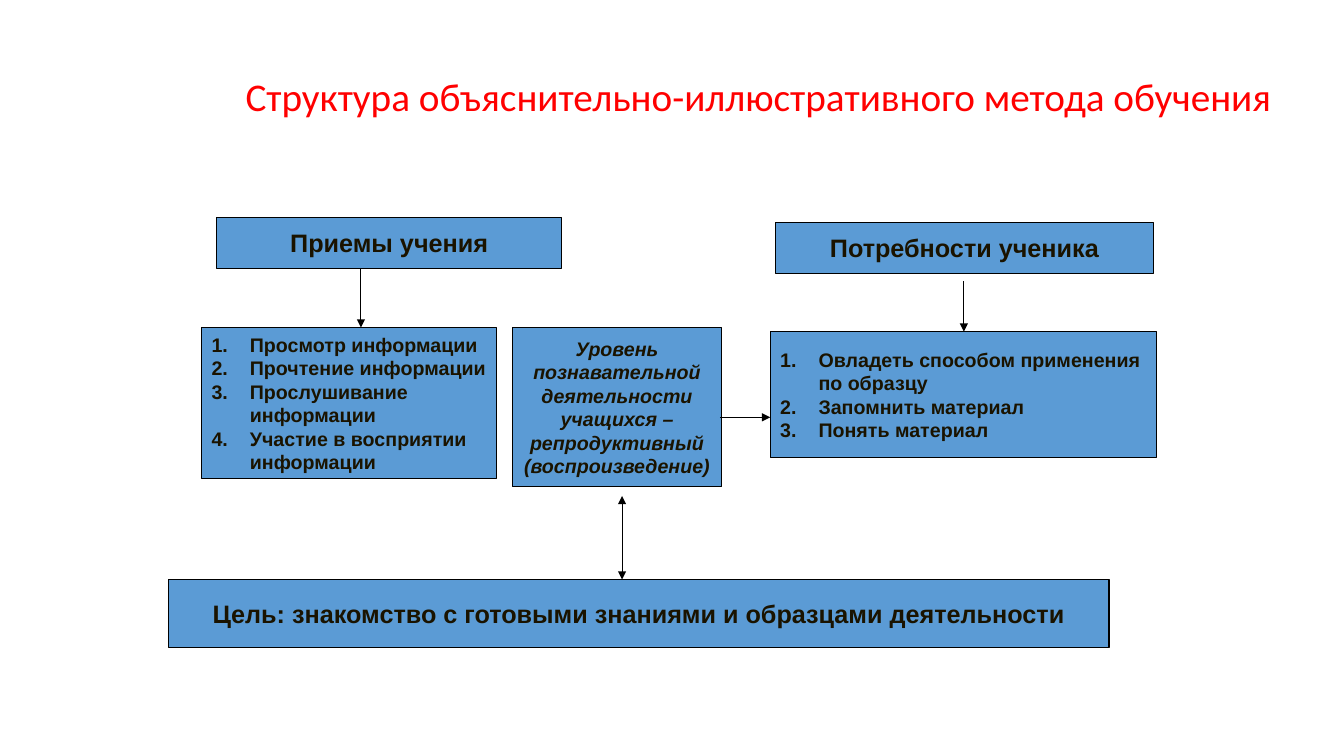
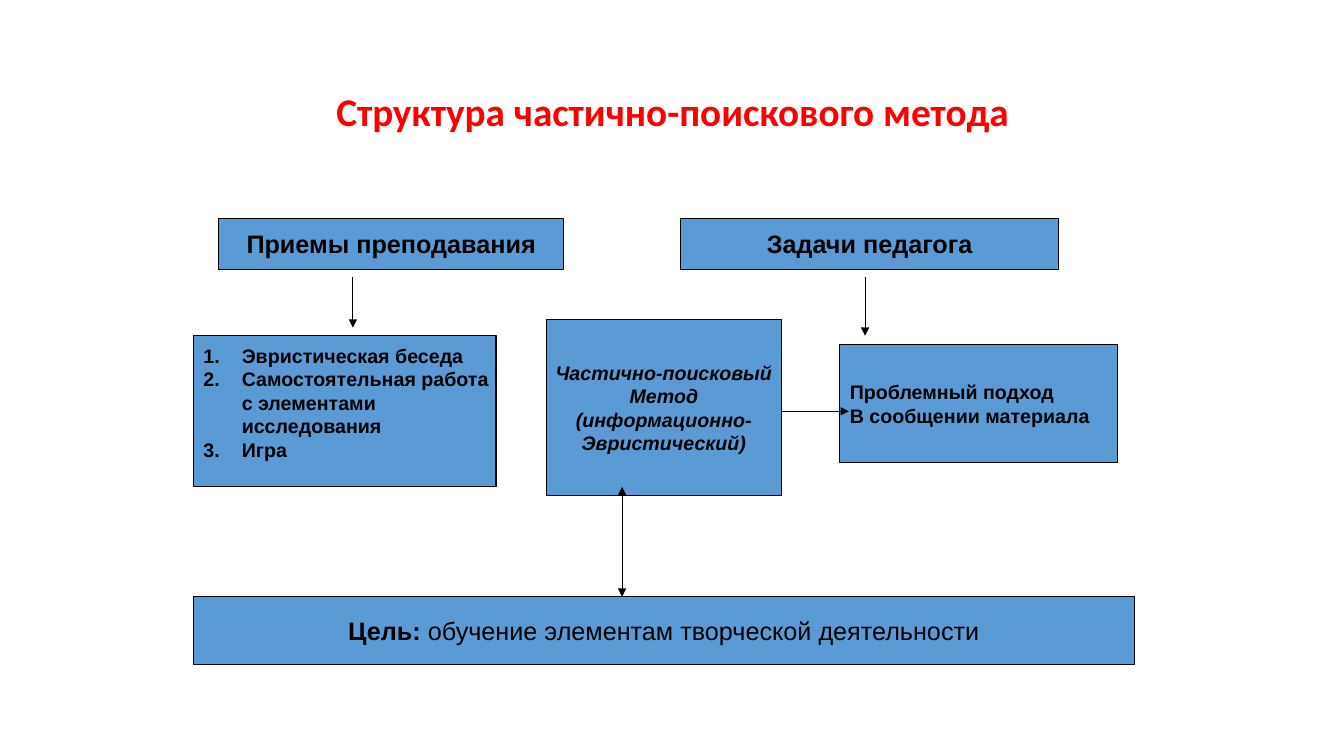
import pptx
import pptx.util
import pptx.dml.color
import pptx.enum.shapes
import pptx.enum.text
import pptx.oxml.ns
import lxml.etree

Inches = pptx.util.Inches
Pt = pptx.util.Pt
ALIGN = pptx.enum.text.PP_ALIGN
ANCHOR = pptx.enum.text.MSO_ANCHOR
TITLE_ONLY = 5


def color(hex_string):
    return pptx.dml.color.RGBColor.from_string(hex_string)


def add_child(parent, tag, **attributes):
    return lxml.etree.SubElement(parent, pptx.oxml.ns.qn(tag), **attributes)


def number_paragraph(paragraph):
    properties = paragraph._p.get_or_add_pPr()
    properties.set("marL", str(Inches(0.38)))
    properties.set("indent", str(Inches(-0.38)))
    add_child(properties, "a:buFont", typeface="Arial")
    add_child(properties, "a:buAutoNum", type="arabicPeriod")


def write_text(frame, paragraphs, font="Arial", size=18, ink="000000", bold=True,
               italic=False, align=ALIGN.CENTER, anchor=ANCHOR.MIDDLE,
               spacing=None, numbered=False, plain_ending=""):
    frame.word_wrap = True
    frame.vertical_anchor = anchor
    for index, text in enumerate(paragraphs):
        paragraph = frame.paragraphs[0] if index == 0 else frame.add_paragraph()
        paragraph.alignment = align
        if spacing:
            paragraph.line_spacing = spacing
        if numbered:
            number_paragraph(paragraph)
        pieces = [(text, bold)]
        if plain_ending:
            pieces.append((plain_ending, False))
        for piece, weight in pieces:
            run = paragraph.add_run()
            run.text = piece
            run.font.name = font
            run.font.size = Pt(size)
            run.font.bold = weight
            run.font.italic = italic
            run.font.color.rgb = color(ink)


class MethodDeck:
    fill = "5B9BD5"
    outline = "000000"
    title_ink = "FF0000"

    def __init__(self):
        self.presentation = pptx.Presentation()
        self.presentation.slide_width = Inches(13.33)
        self.presentation.slide_height = Inches(7.5)

    def start_slide(self, title, left, top, ink, bold=False):
        layout = self.presentation.slide_layouts[TITLE_ONLY]
        self.slide = self.presentation.slides.add_slide(layout)
        self.ink = ink
        heading = self.slide.shapes.title
        heading.left, heading.top = Inches(left), Inches(top)
        heading.width, heading.height = Inches(11.5), Inches(1.45)
        write_text(heading.text_frame, [title], font="Calibri", size=28,
                   ink=self.title_ink, bold=bold, spacing=0.9)

    def box(self, left, top, width, height, paragraphs, insets=(0.05, 0.05), **text_format):
        box = self.slide.shapes.add_shape(
            pptx.enum.shapes.MSO_SHAPE.RECTANGLE,
            Inches(left), Inches(top), Inches(width), Inches(height))
        box.shadow.inherit = False
        box.fill.solid()
        box.fill.fore_color.rgb = color(self.fill)
        box.line.color.rgb = color(self.outline)
        box.line.width = Pt(0.75)
        frame = box.text_frame
        frame.margin_left, frame.margin_right = (Inches(inset) for inset in insets)
        write_text(frame, paragraphs, ink=self.ink, **text_format)
        return frame

    def header(self, left, top, width, text):
        self.box(left, top, width, 0.5, [text])

    def details(self, left, top, width, height, paragraphs, **text_format):
        return self.box(left, top, width, height, paragraphs, insets=(0.1, 0.02),
                        size=14, align=ALIGN.LEFT, **text_format)

    def level(self, left, top, width, height, paragraphs):
        self.box(left, top, width, height, paragraphs, size=14, italic=True)

    def goal(self, left, top, text, **text_format):
        self.box(left, top, 9.33, 0.67, [text], **text_format)

    def arrow(self, start, end, both_ends=False):
        arrow = self.slide.shapes.add_connector(
            pptx.enum.shapes.MSO_CONNECTOR.STRAIGHT,
            *(Inches(length) for length in (*start, *end)))
        arrow.line.color.rgb = color(self.outline)
        arrow.line.width = Pt(0.75)
        line = arrow.line._get_or_add_ln()
        if both_ends:
            add_child(line, "a:headEnd", type="triangle")
        add_child(line, "a:tailEnd", type="triangle")
        add_child(arrow._element.spPr, "a:effectLst")


def add_explanatory_method(deck):
    deck.start_slide("Структура объяснительно-иллюстративного метода обучения",
                     1.77, 0.26, ink="1A1300")
    deck.header(2.15, 2.16, 3.42, "Приемы учения")
    deck.header(7.69, 2.21, 3.75, "Потребности ученика")
    deck.details(2, 3.25, 2.92, 1.5, [
        "Просмотр информации",
        "Прочтение информации",
        "Прослушивание информации",
        "Участие в восприятии информации",
    ], numbered=True)
    deck.level(5.08, 3.25, 2.08, 1.58, [
        "Уровень познавательной деятельности учащихся – репродуктивный (воспроизведение)",
    ])
    deck.details(7.64, 3.29, 3.83, 1.25, [
        "Овладеть способом применения по образцу",
        "Запомнить материал",
        "Понять материал",
    ], numbered=True)
    deck.goal(1.67, 5.75, "Цель: знакомство с готовыми знаниями и образцами деятельности")
    deck.arrow((7.14, 4.14), (7.64, 4.14))
    deck.arrow((3.58, 2.67), (3.58, 3.25))
    deck.arrow((9.56, 2.79), (9.56, 3.29))
    deck.arrow((6.17, 4.92), (6.17, 5.75), both_ends=True)


def add_partial_search_method(deck):
    deck.start_slide("Структура частично-поискового метода",
                     0.92, 0.4, ink="000000", bold=True)
    deck.header(2.17, 2.17, 3.42, "Приемы преподавания")
    deck.header(6.75, 2.17, 3.75, "Задачи педагога")
    techniques = deck.details(1.92, 3.33, 3, 1.5, [
        "Эвристическая беседа",
        "Самостоятельная работа с элементами исследования",
        "Игра",
    ], numbered=True, anchor=ANCHOR.TOP)
    techniques.margin_top = Inches(0.08)
    deck.level(5.42, 3.17, 2.33, 1.75, [
        "Частично-поисковый",
        "Метод",
        "(информационно-",
        "Эвристический)",
    ])
    deck.details(8.33, 3.42, 2.75, 1.17, [
        "Проблемный подход",
        "В сообщении материала",
    ])
    deck.goal(1.92, 5.92, "Цель: ", plain_ending="обучение элементам творческой деятельности")
    deck.arrow((7.75, 4.08), (8.42, 4.08))
    deck.arrow((3.5, 2.75), (3.5, 3.25))
    deck.arrow((8.58, 2.75), (8.58, 3.33))
    deck.arrow((6.17, 4.83), (6.17, 5.92), both_ends=True)


def main():
    deck = MethodDeck()
    add_explanatory_method(deck)
    add_partial_search_method(deck)
    deck.presentation.save("out.pptx")


if __name__ == "__main__":
    main()
